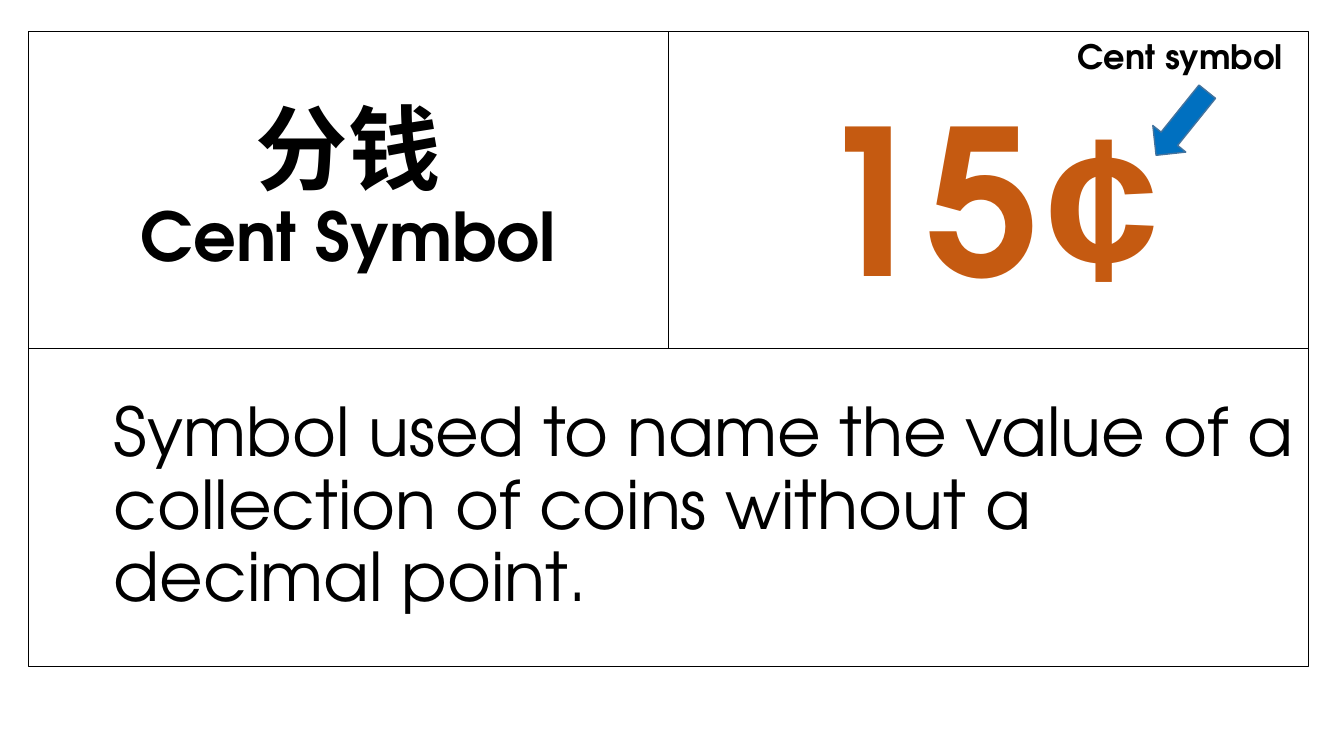
from lxml import etree
from pptx import Presentation, util as u
from pptx.dml.color import RGBColor
from pptx.enum import shapes, text
from pptx.oxml.ns import qn

THEME = {
    "ink": "000000", "price": "C55A11", "arrow": "0070C0", "edge": "43739E",
    "face": "TeX Gyre Adventor", "han": "Roboto", "mono": "Courier New",
    "term": 66, "word": 48, "coin": 144.6, "note": 24,
}
LEFT, TOP, COL, ROW = 0.28, 0.31, 6.35, 3.15


def place(box, col, row, span=1):
    """Put a placeholder on the two-by-two card grid with a thin border."""
    frame = {"left": LEFT + col * COL, "top": TOP + row * ROW,
             "width": span * COL, "height": ROW}
    for key, val in frame.items():
        setattr(box, key, u.Inches(val))
    box.line.color.rgb = RGBColor.from_string(THEME["ink"])
    box.line.width = u.Pt(0.75)
    body = box.text_frame
    look = {"word_wrap": True, "auto_size": text.MSO_AUTO_SIZE.NONE,
            "vertical_anchor": text.MSO_ANCHOR.MIDDLE}
    for key, val in look.items():
        setattr(body, key, val)
    return body


def write(para, words, size, face="face", color="ink", bold=True):
    run = para.add_run()
    run.text = words
    look = {"name": THEME[face], "size": u.Pt(THEME[size]), "bold": bold}
    for key, val in look.items():
        setattr(run.font, key, val)
    run.font.color.rgb = RGBColor.from_string(THEME[color])
    return run


deck = Presentation()
deck.slide_width, deck.slide_height = u.Inches(13.33), u.Inches(7.5)
slide = deck.slides.add_slide(deck.slide_layouts[3])
title, price, define = slide.placeholders

# Term in both languages
para = place(title, 0, 0).paragraphs[0]
para.alignment, para.line_spacing = text.PP_ALIGN.CENTER, 0.9
han = write(para, "分钱", "term", "han")
etree.SubElement(han.font._element, qn("a:ea"), typeface=THEME["han"])
para.add_line_break()
write(para, "Cent Symbol", "word")

# Example price and definition
example = place(price, 1, 0)
example.margin_top = u.Inches(0.75)
meaning = place(define, 0, 1, span=2)
for body, indent, gap, align in (
    (example, 0, 0.7, text.PP_ALIGN.CENTER),
    (meaning, 0.75, 0.9, text.PP_ALIGN.LEFT),
):
    para = body.paragraphs[0]
    props = para._p.get_or_add_pPr()
    props.set("marL", str(u.Inches(indent)))
    props.set("indent", "0")
    etree.SubElement(props, qn("a:buNone"))
    para.alignment, para.line_spacing = align, gap
    para.space_before = u.Pt(0)
write(example.paragraphs[0], "15", "coin", color="price")
write(example.paragraphs[0], "¢", "coin", "mono", "price")
write(meaning.paragraphs[0],
      "Symbol used to name the value of a collection of coins "
      "without a decimal point.", "word", bold=False)

# Arrow and label for the symbol
arrow = slide.shapes.add_shape(
    shapes.MSO_SHAPE.UP_ARROW,
    u.Inches(11.51), u.Inches(0.82), u.Inches(0.42), u.Inches(0.81))
arrow.rotation = 218.8
arrow.shadow.inherit = False
arrow.fill.solid()
arrow.fill.fore_color.rgb = RGBColor.from_string(THEME["arrow"])
arrow.line.color.rgb = RGBColor.from_string(THEME["edge"])
arrow.line.width = u.Pt(1)

label = slide.shapes.add_textbox(
    u.Inches(10.59), u.Inches(TOP), u.Inches(2.54), u.Inches(0.51)).text_frame
label.word_wrap = True
label.auto_size = text.MSO_AUTO_SIZE.SHAPE_TO_FIT_TEXT
write(label.paragraphs[0], "Cent symbol", "note")

deck.save("out.pptx")
